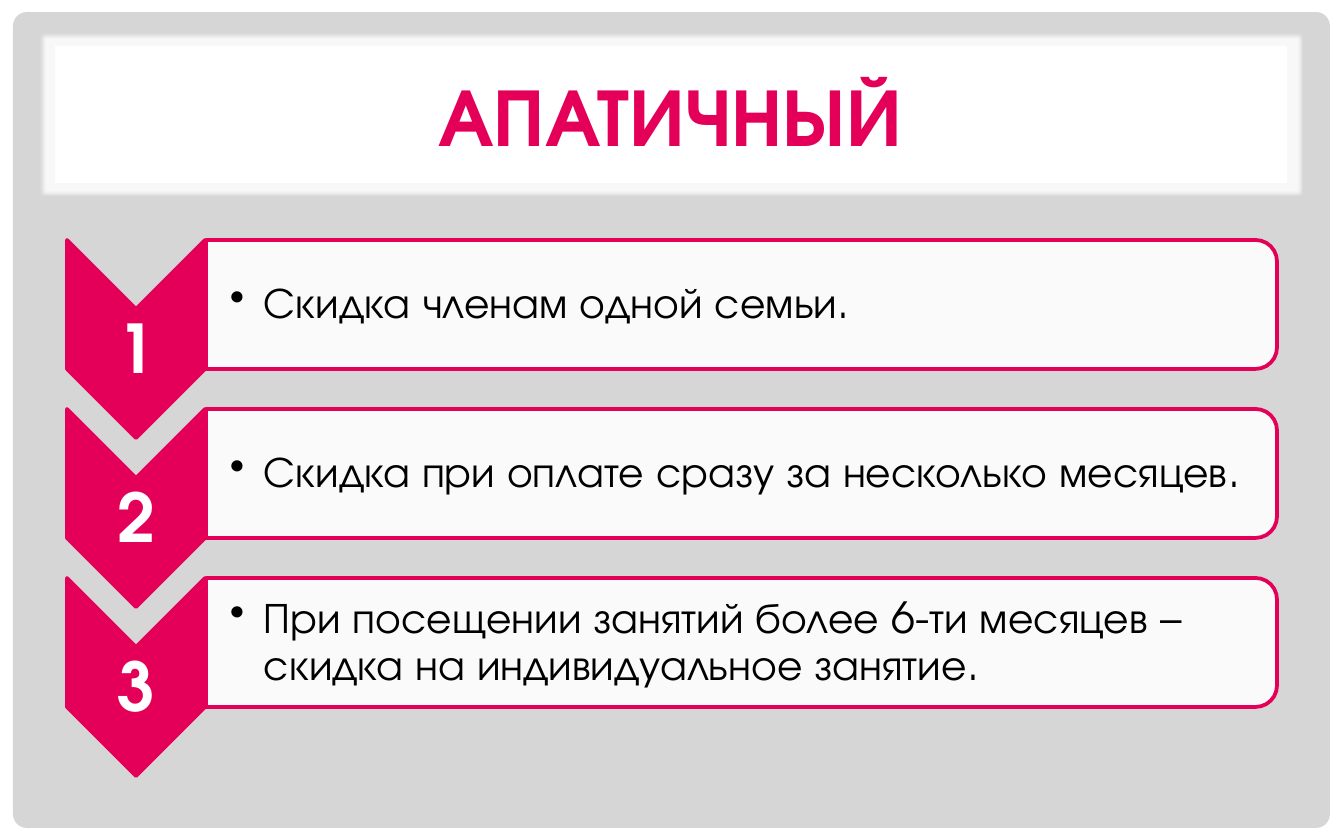
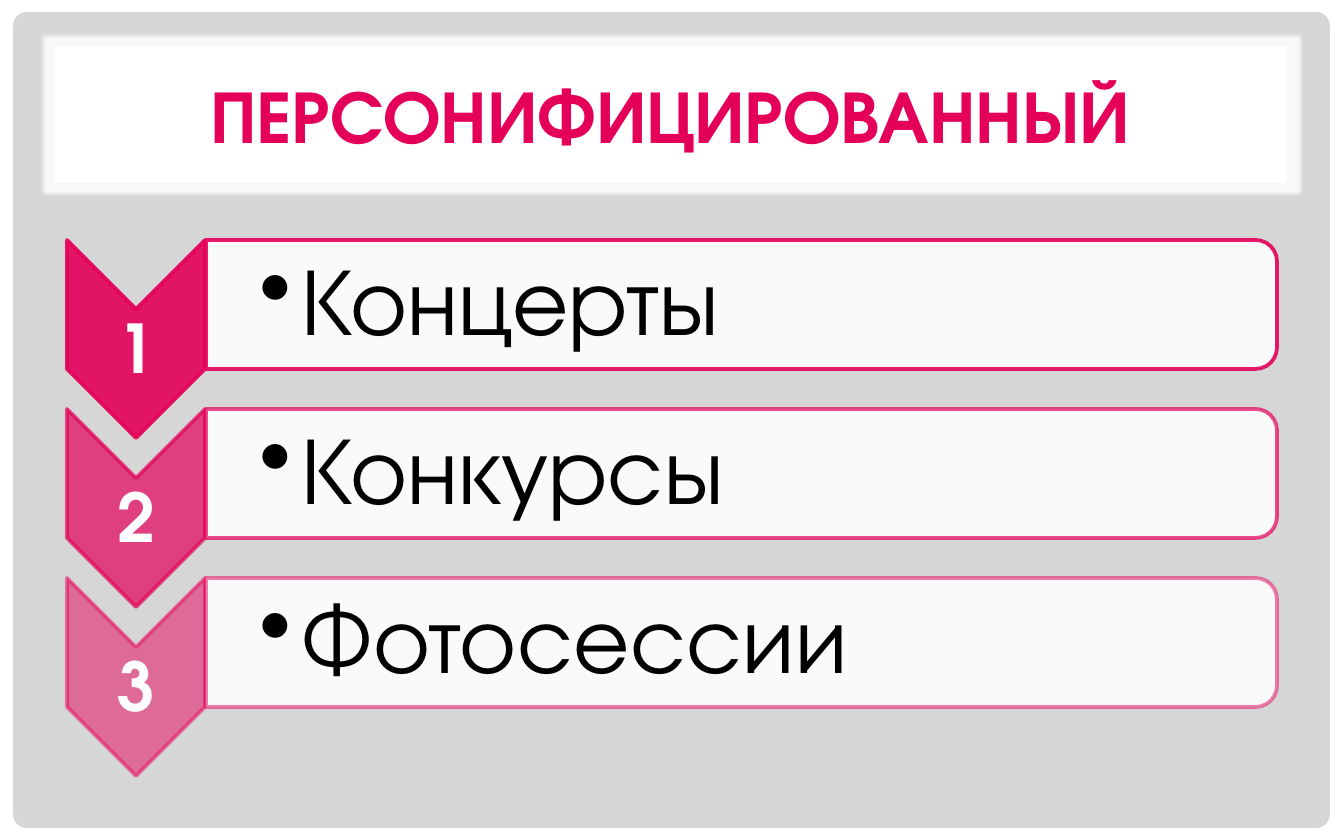
from dataclasses import dataclass

from lxml import etree
from pptx import Presentation
from pptx.dml.color import RGBColor
from pptx.enum.shapes import MSO_SHAPE
from pptx.enum.text import MSO_ANCHOR, PP_ALIGN
from pptx.oxml.ns import qn
from pptx.util import Emu, Pt

RECTANGLE = MSO_SHAPE.RECTANGLE
ROUNDED = MSO_SHAPE.ROUNDED_RECTANGLE
CHEVRON = MSO_SHAPE.CHEVRON
ROUND_TOP = MSO_SHAPE.ROUND_2_SAME_RECTANGLE
MIDDLE = MSO_ANCHOR.MIDDLE
CENTER = PP_ALIGN.CENTER
LEFT = PP_ALIGN.LEFT

EMU_PER_PX = 914400 / 134.4
SLIDE_SIZE = (1344, 840)
STEP_TOP = 240
STEP_PITCH = 169


@dataclass(frozen=True)
class Theme:
    font: str = "TeX Gyre Adventor"
    accent: str = "E40059"
    gray: str = "D6D6D6"
    white: str = "FFFFFF"
    black: str = "000000"
    title_outline: str = "696969"
    number_size: int = 36
    line_width: int = 2
    line_spacing: float = 0.9
    panel_opacity: int = 90


@dataclass(frozen=True)
class BulletStyle:
    """Type size in points; inset, margin and hanging indent in px."""
    size: int
    left_inset: int
    margin: int
    indent: int


THEME = Theme()
SMALL_BULLET = BulletStyle(size=23, left_inset=24, margin=3, indent=34)
LARGE_BULLET = BulletStyle(size=51, left_inset=54, margin=5, indent=42)


def px(length):
    return Emu(round(length * EMU_PER_PX))


def add_alpha(color_node, opacity):
    if opacity < 100:
        etree.SubElement(color_node, qn("a:alpha"), val=str(opacity * 1000))


def add_block(page, kind, box, color, opacity=100, line_opacity=None):
    """Filled preset shape; it gets an accent line only with a line_opacity."""
    shape = page.shapes.add_shape(kind, *map(px, box))
    shape.shadow.inherit = False
    shape.fill.solid()
    shape.fill.fore_color.rgb = RGBColor.from_string(color)
    add_alpha(shape.element.spPr.find(".//" + qn("a:srgbClr")), opacity)
    if line_opacity is None:
        shape.line.fill.background()
    else:
        shape.line.width = Pt(THEME.line_width)
        shape.line.color.rgb = RGBColor.from_string(THEME.accent)
        line_color = shape.element.spPr.find(qn("a:ln")).find(".//" + qn("a:srgbClr"))
        add_alpha(line_color, line_opacity)
    return shape


def add_turned_block(page, kind, visible_box, color, opacity, line_opacity):
    """Shape turned by 90 degrees so that it covers visible_box."""
    left, top, width, height = visible_box
    shift = (width - height) / 2
    frame = (left + shift, top - shift, height, width)
    shape = add_block(page, kind, frame, color, opacity, line_opacity)
    shape.rotation = 90
    return shape


def add_text(page, box, text, size, color, bold=False, align=CENTER):
    """Text box with one middle-anchored paragraph, which is returned with its frame."""
    frame = page.shapes.add_textbox(*map(px, box)).text_frame
    frame.word_wrap = True
    frame.vertical_anchor = MIDDLE
    frame.text = text
    para = frame.paragraphs[0]
    para.alignment = align
    font = para.runs[0].font
    font.name = THEME.font
    font.size = Pt(size)
    font.bold = bold
    font.color.rgb = RGBColor.from_string(color)
    return frame, para


def set_insets(frame, left, others):
    frame.margin_left = px(left)
    frame.margin_top = frame.margin_right = frame.margin_bottom = px(others)


def add_backdrop(page):
    page.background.fill.solid()
    page.background.fill.fore_color.rgb = RGBColor.from_string(THEME.gray)
    add_block(page, RECTANGLE, (0, 0, *SLIDE_SIZE), THEME.white)
    card = add_block(page, ROUNDED, (13, 12, 1317, 816), THEME.gray)
    card.adjustments[0] = 0.017
    rim = add_block(page, RECTANGLE, (40, 34, 1263, 162), THEME.white, opacity=83)
    effects = rim.element.spPr.find(qn("a:effectLst"))
    etree.SubElement(effects, qn("a:softEdge"), rad=str(Pt(1)))
    add_block(page, RECTANGLE, (55, 46, 1232, 137), THEME.white)


def add_title(page, text, size):
    para = add_text(page, (63, 50, 1214, 128), text, size, THEME.accent, bold=True)[1]
    outline = etree.Element(qn("a:ln"), w=str(Pt(0.75)))
    fill = etree.SubElement(outline, qn("a:solidFill"))
    etree.SubElement(fill, qn("a:srgbClr"), val=THEME.title_outline)
    etree.SubElement(outline, qn("a:prstDash"), val="sysDot")
    para.runs[0].font.size = Pt(size)
    para.runs[0]._r.get_or_add_rPr().insert(0, outline)


def add_number(page, top, number):
    frame, para = add_text(page, (67, top + 69, 138, 86), str(number),
                           THEME.number_size, THEME.white, bold=True)
    set_insets(frame, 0, 0)
    para.line_spacing = THEME.line_spacing


def add_bullet(page, top, text, style):
    frame, para = add_text(page, (206, top + 7, 1064, 116), text,
                           style.size, THEME.black, align=LEFT)
    set_insets(frame, style.left_inset, style.margin)
    para.level = 1
    para.line_spacing = THEME.line_spacing
    properties = para._p.get_or_add_pPr()
    properties.set("marL", str(px(style.indent)))
    properties.set("indent", str(-px(style.indent)))
    etree.SubElement(properties, qn("a:buChar"), char="•")


def add_step(page, index, text, style, opacity):
    top = STEP_TOP + index * STEP_PITCH
    add_turned_block(page, CHEVRON, (67, top, 138, 198),
                     THEME.accent, opacity, opacity)
    add_number(page, top, index + 1)
    add_turned_block(page, ROUND_TOP, (206, top, 1071, 129),
                     THEME.white, THEME.panel_opacity, opacity)
    add_bullet(page, top, text, style)


def add_steps_page(deck, title, title_size, steps, style, opacities):
    page = deck.slides.add_slide(deck.slide_layouts[6])
    add_backdrop(page)
    add_title(page, title, title_size)
    for index, (text, opacity) in enumerate(zip(steps, opacities)):
        add_step(page, index, text, style, opacity)


def main():
    deck = Presentation()
    deck.slide_width, deck.slide_height = map(px, SLIDE_SIZE)
    add_steps_page(
        deck, "АПАТИЧНЫЙ", 44,
        ["Скидка членам одной семьи.",
         "Скидка при оплате сразу за несколько месяцев.",
         "При посещении занятий более 6-ти месяцев – скидка на индивидуальное занятие."],
        SMALL_BULLET, (100, 100, 100))
    add_steps_page(
        deck, "ПЕРСОНИФИЦИРОВАННЫЙ", 40,
        ["Концерты", "Конкурсы", "Фотосессии"],
        LARGE_BULLET, (90, 70, 50))
    deck.save("out.pptx")


if __name__ == "__main__":
    main()
